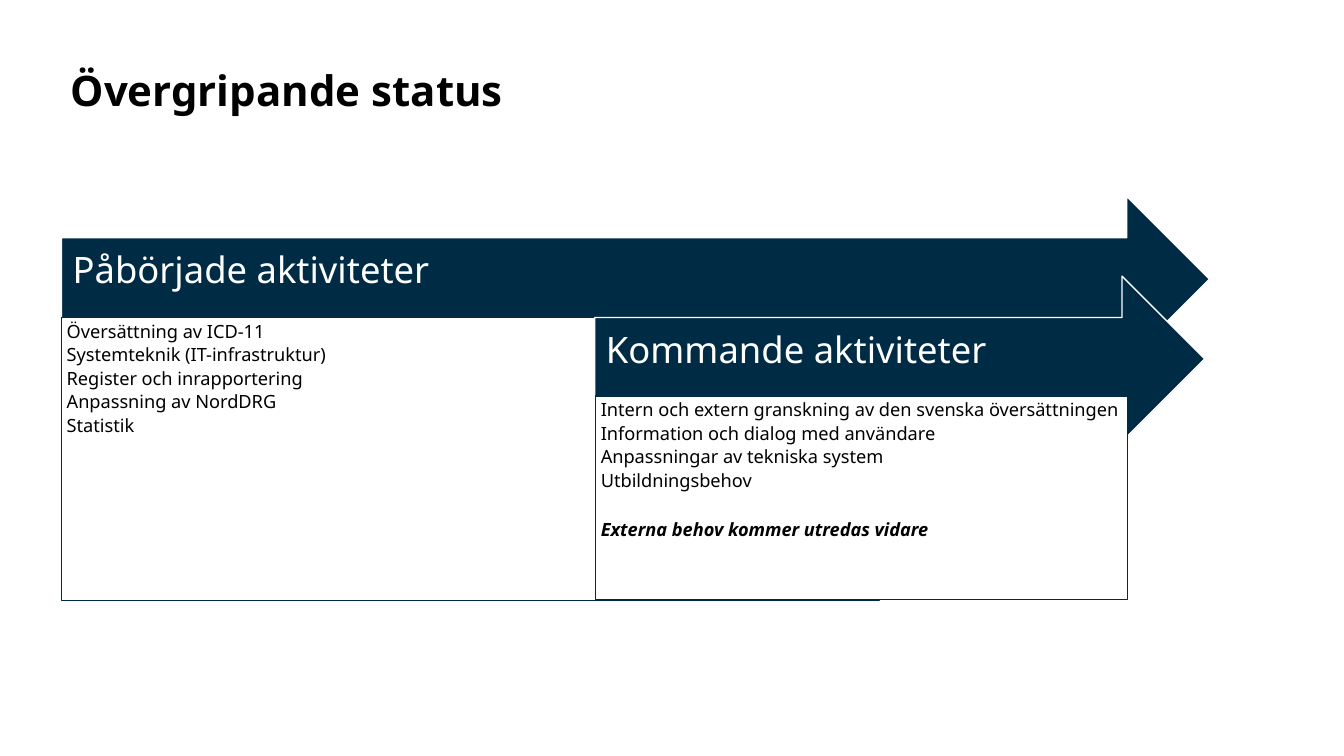
"""Build the status slide with its two overlapping activity arrows."""
from dataclasses import dataclass

import pptx
import pptx.dml.color
import pptx.enum.shapes
import pptx.enum.text
import pptx.oxml
import pptx.slide
import pptx.text.text
import pptx.util

Cm = pptx.util.Cm
Pt = pptx.util.Pt
Color = pptx.dml.color.RGBColor
Anchor = pptx.enum.text.MSO_ANCHOR

NAVY = Color(0x00, 0x2B, 0x45)
WHITE = Color(0xFF, 0xFF, 0xFF)
BLACK = Color(0x00, 0x00, 0x00)
FACE = "Noto Sans"
HEAD = 4.17
DRAW = "http://schemas.openxmlformats.org/drawingml/2006/main"


@dataclass
class Box:
    left: float
    top: float
    width: float
    height: float


@dataclass
class Phase:
    name: str
    arrow: Box
    panel: Box
    items: list[str]
    note: str = ""


PHASES = [
    Phase(
        "Påbörjade aktiviteter",
        Box(1.55, 4.95, 28.93, HEAD),
        Box(1.55, 8, 20.6, 7.14),
        [
            "Översättning av ICD-11",
            "Systemteknik (IT-infrastruktur)",
            "Register och inrapportering",
            "Anpassning av NordDRG",
            "Statistik",
        ],
    ),
    Phase(
        "Kommande aktiviteter",
        Box(14.99, 6.96, 15.37, HEAD),
        Box(15.01, 9.98, 13.41, 5.13),
        [
            "Intern och extern granskning av den svenska översättningen",
            "Information och dialog med användare",
            "Anpassningar av tekniska system",
            "Utbildningsbehov",
        ],
        "Externa behov kommer utredas vidare",
    ),
]


def place(shape, box: Box) -> None:
    """Move and size a shape."""
    shape.left, shape.top = Cm(box.left), Cm(box.top)
    shape.width, shape.height = Cm(box.width), Cm(box.height)


def paint(shape, fill: Color, line: Color) -> None:
    """Give a shape a solid fill and a thin outline."""
    shape.fill.solid()
    shape.fill.fore_color.rgb = fill
    shape.line.color.rgb = line
    shape.line.width = Pt(1)


def frame(shape, anchor: Anchor, *pads: float) -> pptx.text.text.TextFrame:
    """Set wrapping, anchor and insets (left, top, right, bottom)."""
    text = shape.text_frame
    text.word_wrap = True
    text.auto_size = pptx.enum.text.MSO_AUTO_SIZE.NONE
    text.vertical_anchor = anchor
    text.margin_left, text.margin_top, text.margin_right, text.margin_bottom = map(Cm, pads)
    return text


def style(para, size: float, color: Color, pitch: float, bold: bool = False) -> None:
    """Format a whole left-aligned paragraph."""
    para.alignment = pptx.enum.text.PP_ALIGN.LEFT
    para.line_spacing = pitch
    para.space_before = Pt(0)
    para.font.name = FACE
    para.font.size = Pt(size)
    para.font.bold = bold
    para.font.color.rgb = color


def plain(para) -> None:
    """Remove the bullet and indent of a list paragraph."""
    props = para._p.get_or_add_pPr()
    props.set("marL", "0")
    props.set("indent", "0")
    props.append(pptx.oxml.parse_xml(f'<a:buNone xmlns:a="{DRAW}"/>'))


def draw(slide: pptx.slide.Slide, phase: Phase, panel) -> None:
    """Draw one arrow with its list panel in front."""
    arrow = slide.shapes.add_shape(pptx.enum.shapes.MSO_SHAPE.RIGHT_ARROW, 0, 0, 0, 0)
    arrow.shadow.inherit = False
    place(arrow, phase.arrow)
    paint(arrow, NAVY, WHITE)
    text = frame(arrow, Anchor.MIDDLE, 0.28, 0.28, 0.71, 0.66)
    text.text = phase.name
    style(text.paragraphs[0], 26, WHITE, 0.9)

    arrow.element.addnext(panel.element)
    place(panel, phase.panel)
    paint(panel, WHITE, NAVY)
    text = frame(panel, Anchor.TOP, 0.13, 0.13, 0.13, 0.13)
    text.text = "\n".join(phase.items + [phase.note] * bool(phase.note))
    for para in text.paragraphs:
        plain(para)
        style(para, 13, BLACK, 0.9)
        para.space_after = Pt(2.7)
    if phase.note:
        para.space_before = Pt(18.6)
        para.font.bold = para.font.italic = True


def main() -> None:
    """Assemble and save the slide."""
    deck = pptx.Presentation()
    deck.slide_width, deck.slide_height = Cm(33.87), Cm(19.05)
    slide = deck.slides.add_slide(deck.slide_layouts[3])
    title, *panels = slide.placeholders
    place(title, Box(1.78, 1.5, 27, 3))
    text = frame(title, Anchor.TOP, 0, 0, 0, 0.13)
    text.text = "Övergripande status"
    style(text.paragraphs[0], 30, BLACK, 1.1, True)
    for phase, panel in zip(PHASES, panels):
        draw(slide, phase, panel)
    deck.save("out.pptx")


if __name__ == "__main__":
    main()
